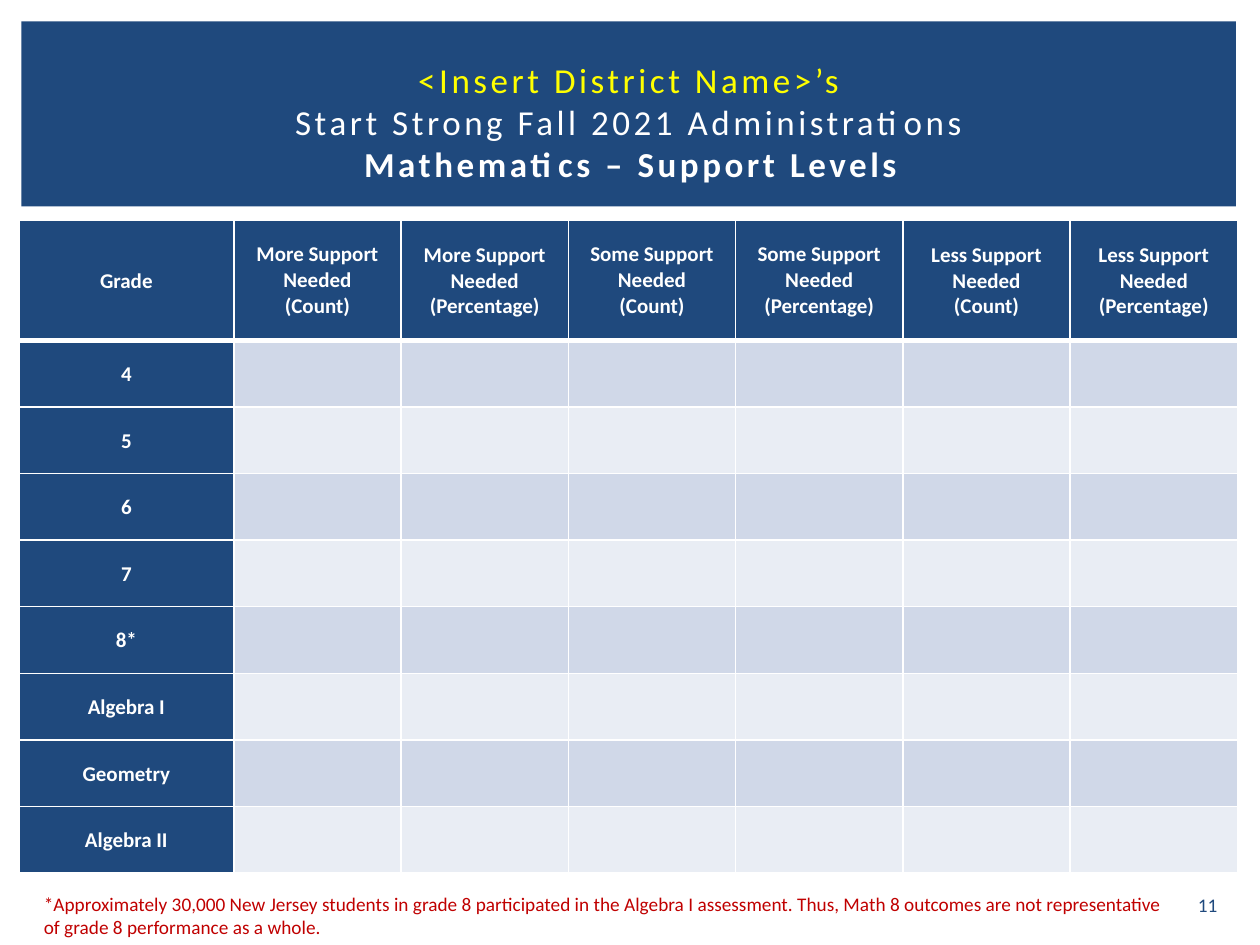
from dataclasses import dataclass

from lxml import etree
from pptx import Presentation
from pptx.dml.color import RGBColor
from pptx.enum.shapes import MSO_SHAPE
from pptx.enum.text import MSO_ANCHOR, PP_ALIGN
from pptx.oxml.ns import qn
from pptx.util import Pt

RECTANGLE = MSO_SHAPE.RECTANGLE
MIDDLE, TOP = MSO_ANCHOR.MIDDLE, MSO_ANCHOR.TOP
CENTER, LEFT = PP_ALIGN.CENTER, PP_ALIGN.LEFT
TITLE_ONLY = 5
FONT = "Calibri"
NAVY, WHITE, YELLOW, RED = "1F497D", "FFFFFF", "FFFF00", "C00000"
BANDS = ("D0D8E8", "E9EDF4")


@dataclass
class Box:
    left: float
    top: float
    width: float
    height: float

    def lengths(self) -> tuple:
        return Pt(self.left), Pt(self.top), Pt(self.width), Pt(self.height)


@dataclass
class TitleLine:
    text: str
    color: str
    bold: bool = False


@dataclass
class SupportColumn:
    level: str
    measure: str
    tight: bool = False


@dataclass
class Note:
    text: str
    box: Box
    color: str
    alignment: PP_ALIGN
    anchor: MSO_ANCHOR


TITLE_LINES = (
    TitleLine("<Insert District Name>’s", YELLOW),
    TitleLine("Start Strong Fall 2021 Administrations", WHITE),
    TitleLine("Mathematics – Support Levels", WHITE, True),
)
SUPPORT_COLUMNS = (
    SupportColumn("More", "Count"),
    SupportColumn("More", "Percentage", True),
    SupportColumn("Some", "Count"),
    SupportColumn("Some", "Percentage"),
    SupportColumn("Less", "Count", True),
    SupportColumn("Less", "Percentage", True),
)
GRADES = ("4", "5", "6", "7", "8*", "Algebra I", "Geometry", "Algebra II")
NOTES = (
    Note("*Approximately 30,000 New Jersey students in grade 8 participated in the "
         "Algebra I assessment. Thus, Math 8 outcomes are not representative of "
         "grade 8 performance as a whole.",
         Box(18, 506.2, 655.2, 33.8), RED, LEFT, TOP),
    Note("11", Box(673.2, 506.2, 33.8, 21.6), NAVY, CENTER, MIDDLE),
)
BANNER_BOX = Box(12.2, 12.2, 694.1, 105.8)
TITLE_BOX = Box(30.2, 28.1, 660.2, 82.8)
TABLE_BOX = Box(10.8, 126, 696.4, 373)
GRADE_WIDTH, HEADER_HEIGHT = 122.8, 68.4


def rgb(color: str) -> RGBColor:
    return RGBColor.from_string(color)


def add_run(paragraph, text: str, size: float, color: str, bold: bool = False):
    run = paragraph.add_run()
    run.text = text
    run.font.name, run.font.size, run.font.bold = FONT, Pt(size), bold
    run.font.color.rgb = rgb(color)
    return run


def add_banner(slide) -> None:
    banner = slide.shapes.add_shape(RECTANGLE, *BANNER_BOX.lengths())
    banner.shadow.inherit = False
    banner.fill.solid()
    banner.fill.fore_color.rgb = rgb(NAVY)
    banner.line.fill.background()
    # The banner lies behind the title
    slide.shapes.title.element.addprevious(banner.element)


def fill_title(title) -> None:
    title.left, title.top, title.width, title.height = TITLE_BOX.lengths()
    frame = title.text_frame
    frame.word_wrap, frame.vertical_anchor = True, MIDDLE
    paragraph = frame.paragraphs[0]
    paragraph.alignment = CENTER
    for index, line in enumerate(TITLE_LINES):
        if index:
            paragraph.add_line_break()
        run = add_run(paragraph, line.text, 20, line.color, line.bold)
        run.font.element.set("spc", "200") if hasattr(run.font, "element") else \
            run._r.get_or_add_rPr().set("spc", "200")
    for line_break in title.element.iter(qn("a:br")):
        etree.SubElement(line_break, qn("a:rPr"), sz="2000")


def style_cell(cell, fill: str, top: float = 1, bottom: float = 1) -> None:
    properties = cell._tc.get_or_add_tcPr()
    for side, width in (("L", 1), ("R", 1), ("T", top), ("B", bottom)):
        border = etree.SubElement(properties, qn(f"a:ln{side}"), w=str(Pt(width)))
        solid = etree.SubElement(border, qn("a:solidFill"))
        etree.SubElement(solid, qn("a:srgbClr"), val=WHITE)
    cell.fill.solid()
    cell.fill.fore_color.rgb = rgb(fill)


def write_cell(cell, lines: tuple, tight: bool = False) -> None:
    cell.vertical_anchor = MIDDLE
    cell.margin_left = cell.margin_right = Pt(0.7 if tight else 3.6)
    cell.margin_top = Pt(0.7 if tight else 2.2)
    cell.margin_bottom = Pt(0 if tight else 2.2)
    frame = cell.text_frame
    for index, line in enumerate(lines):
        paragraph = frame.add_paragraph() if index else frame.paragraphs[0]
        paragraph.alignment = CENTER
        add_run(paragraph, line, 12, WHITE, True)


def write_grade(cell, label: str) -> None:
    write_cell(cell, (label,))
    paragraph = cell.text_frame.paragraphs[0]
    paragraph.line_spacing, paragraph.space_after = 1.06, Pt(8)


def add_support_table(slide) -> None:
    row_count, column_count = len(GRADES) + 1, len(SUPPORT_COLUMNS) + 1
    table = slide.shapes.add_table(row_count, column_count, *TABLE_BOX.lengths()).table
    table.first_row = table.horz_banding = False

    # Grid
    level_width = (TABLE_BOX.width - GRADE_WIDTH) / len(SUPPORT_COLUMNS)
    grade_height = (TABLE_BOX.height - HEADER_HEIGHT) / len(GRADES)
    for index, column in enumerate(table.columns):
        column.width = Pt(level_width if index else GRADE_WIDTH)
    for index, row in enumerate(table.rows):
        row.height = Pt(grade_height if index else HEADER_HEIGHT)

    # Fills and borders, with a thick rule under the header
    for row in range(row_count):
        for column in range(column_count):
            heading = row == 0 or column == 0
            fill = NAVY if heading else BANDS[(row - 1) % 2]
            style_cell(table.cell(row, column), fill,
                       top=3 if row == 1 else 1, bottom=3 if row == 0 else 1)

    # Headings
    for row, label in enumerate(("Grade",) + GRADES):
        write_grade(table.cell(row, 0), label)
    for column, support in enumerate(SUPPORT_COLUMNS, start=1):
        lines = (f"{support.level} Support Needed", f"({support.measure})")
        write_cell(table.cell(0, column), lines, support.tight)


def add_note(slide, note: Note) -> None:
    frame = slide.shapes.add_textbox(*note.box.lengths()).text_frame
    frame.word_wrap, frame.vertical_anchor = True, note.anchor
    paragraph = frame.paragraphs[0]
    paragraph.alignment = note.alignment
    add_run(paragraph, note.text, 11, note.color)


def main() -> None:
    presentation = Presentation()
    presentation.slide_width, presentation.slide_height = Pt(720), Pt(540)
    slide = presentation.slides.add_slide(presentation.slide_layouts[TITLE_ONLY])
    add_banner(slide)
    fill_title(slide.shapes.title)
    add_support_table(slide)
    for note in NOTES:
        add_note(slide, note)
    presentation.save("out.pptx")


if __name__ == "__main__":
    main()
